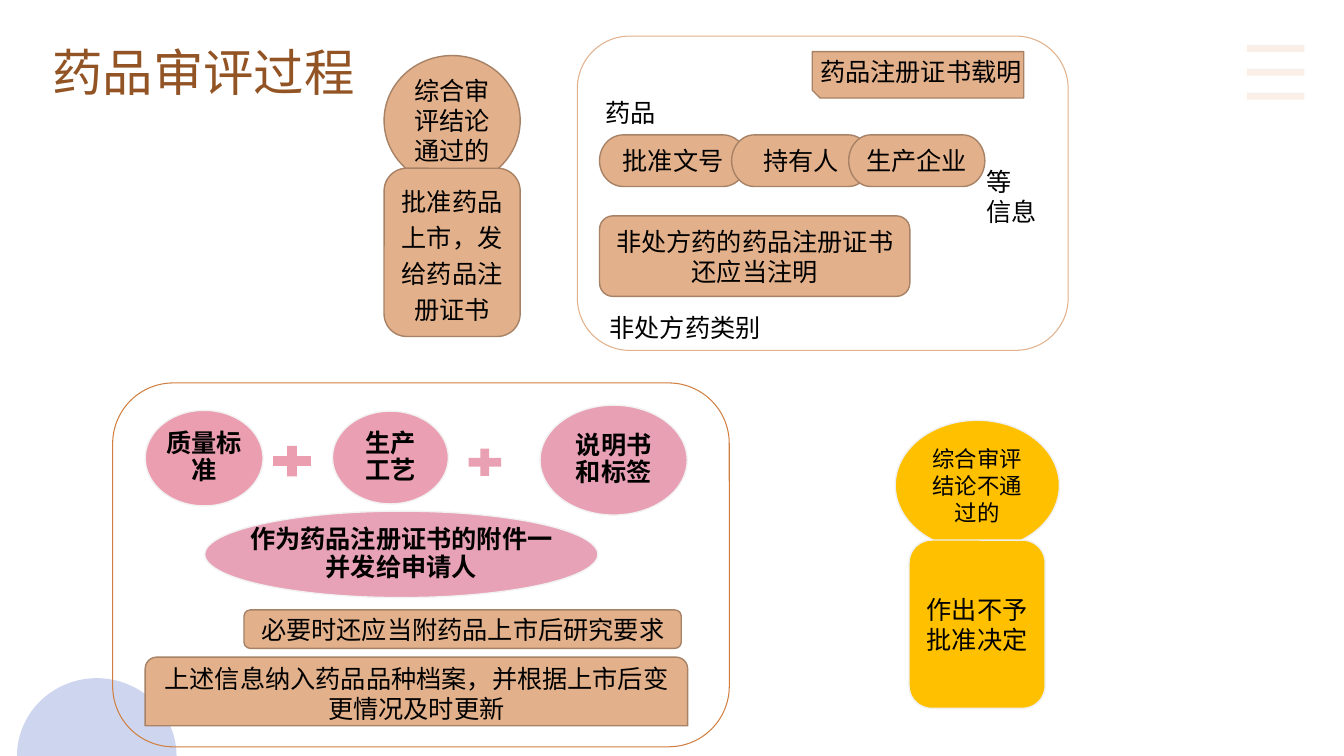
"""Builds the slide on the drug review process."""
from math import cos, pi, sin

from lxml.etree import SubElement
from pptx import Presentation
from pptx.dml.color import RGBColor
from pptx.enum.shapes import MSO_CONNECTOR, MSO_SHAPE
from pptx.enum.text import MSO_ANCHOR, PP_ALIGN
from pptx.oxml.ns import qn
from pptx.util import Cm, Pt

THEME = {
    "font": "Noto Sans CJK SC",
    "body": 18, "small": 16, "heading": 36,
    "ink": "000000", "title": "925424",
    "tan": "E2B08A", "tan_edge": "A78266", "rust": "D07F41",
    "gold": "FFC000", "gold_edge": "F0F0EF",
    "rose_edge": "F2F2F2", "periwinkle": "9FAEE0",
    "roses": ["EB9EAF", "EB9EAF", "EA9FB2", "E9A0B3", "E8A1B4", "E7A2B7"],
}

TITLE = ("药品审评过程", (1.07, 0.91, 23.88, 3.66))
MENU = {"left": 31.42, "right": 32.87, "top": 1.22, "gap": 0.6, "count": 3}
DOME = {"left": 0.43, "top": 17.09, "width": 4.02, "height": 1.96, "steps": 60}

ATTACHMENTS = [
    (["质量标", "准"], (3.66, 10.34, 2.97, 2.41)),
    (None, (6.71, 11.1, 1.3, 1.04)),
    (["生产", "工艺"], (8.38, 10.36, 2.92, 2.34)),
    (None, (11.66, 11.18, 1.12, 0.94)),
    (["说明书", "和标签"], (13.61, 10.21, 3.71, 2.77)),
    (["作为药品注册证书的附件一", "并发给申请人"], (5.16, 12.88, 9.91, 2.18)),
]

STEPS = [
    ("ROUNDED_RECTANGLE", "tan", (6.15, 15.37, 11.02, 0.97), ["必要时还应当附药品上市后研究要求"]),
    ("ROUND_2_SAME_RECTANGLE", "tan", (3.66, 16.56, 13.67, 1.73),
     ["上述信息纳入药品品种档案，并根据上市后变更情况及时更新"]),
    ("OVAL", "tan", (9.68, 1.4, 3.43, 3.28), ["综合审评结论通过的"]),
    ("ROUNDED_RECTANGLE", "tan", (9.68, 4.24, 3.43, 4.24), ["批准药品上市，发给药品注册证书"], "body", 1.2),
    ("OVAL", "gold", (22.56, 10.59, 4.14, 3.28), ["综合审评结论不通过的"], "small"),
    ("ROUNDED_RECTANGLE", "gold", (22.91, 13.61, 3.43, 4.24), ["作出不予批准决定"]),
    ("SNIP_1_RECTANGLE", "tan", (20.47, 1.3, 5.33, 1.17), []),
    ("FLOWCHART_TERMINATOR", "tan", (15.11, 3.4, 3.71, 1.3), ["批准文号"]),
    ("FLOWCHART_TERMINATOR", "tan", (18.44, 3.4, 3.51, 1.3), ["持有人"]),
    ("FLOWCHART_TERMINATOR", "tan", (21.39, 3.4, 3.43, 1.3), ["生产企业"]),
    ("ROUNDED_RECTANGLE", "tan", (15.11, 5.44, 7.82, 2.03), ["非处方药的药品注册证书", "还应当注明"]),
]

LABELS = [
    (["药品注册证书载明"], (20.42, 1.3, 5.94, 1.02)),
    (["药品"], (15.01, 2.34, 1.93, 1.02)),
    (["等", "信息"], (24.61, 4.06, 1.85, 1.8)),
    (["非处方药类别"], (15.11, 7.75, 5.44, 1.02)),
]

FRAMES = [("tan", (14.55, 0.91, 12.37, 7.92)), ("rust", (2.84, 9.65, 15.54, 9.17))]


def rgb(value):
    return RGBColor.from_string(value)


def place(box):
    return [Cm(length) for length in box]


def fade(holder, percent):
    color = next(holder.iter(qn("a:srgbClr")))
    SubElement(color, qn("a:alpha")).set("val", str(percent * 1000))


def add_run(paragraph, words, size="body", color="ink", bold=False):
    run = paragraph.add_run()
    run.text = words
    run.font.size = Pt(THEME[size])
    run.font.bold = bold
    run.font.color.rgb = rgb(THEME[color])
    run.font.name = THEME["font"]
    SubElement(run.font._element, qn("a:ea")).set("typeface", THEME["font"])


def write(frame, lines, size="body", color="ink", align=PP_ALIGN.LEFT, spacing=None):
    frame.word_wrap = True
    for index, words in enumerate(lines):
        paragraph = frame.add_paragraph() if index else frame.paragraphs[0]
        paragraph.alignment = align
        paragraph.line_spacing = spacing
        add_run(paragraph, words, size, color)


def paint(shape, fill=None, edge=None, weight=1):
    shape.shadow.inherit = False
    if fill:
        shape.fill.solid()
        shape.fill.fore_color.rgb = rgb(fill)
    else:
        shape.fill.background()
    if edge:
        shape.line.color.rgb = rgb(edge)
        shape.line.width = Pt(weight)
    else:
        shape.line.fill.background()


def add_menu(shapes):
    for index in range(MENU["count"]):
        y = Cm(MENU["top"] + index * MENU["gap"])
        bar = shapes.add_connector(MSO_CONNECTOR.STRAIGHT, Cm(MENU["left"]), y, Cm(MENU["right"]), y)
        bar.line.color.rgb = rgb(THEME["tan"])
        bar.line.width = Pt(5)
        fade(bar.line._ln, 20)
        SubElement(bar._element.spPr, qn("a:effectLst"))


def add_dome(shapes):
    radius = DOME["width"] / 2
    center, base = DOME["left"] + radius, DOME["top"] + DOME["height"]
    angles = [pi * step / DOME["steps"] for step in range(DOME["steps"] + 1)]
    rim = [(Cm(center + radius * cos(a)), Cm(base - DOME["height"] * sin(a))) for a in angles]
    builder = shapes.build_freeform(*rim[0])
    builder.add_line_segments(rim[1:], close=True)
    dome = builder.convert_to_shape()
    paint(dome, THEME["periwinkle"])
    fade(dome._element.spPr, 50)


def add_attachments(shapes):
    for (lines, box), rose in zip(ATTACHMENTS, THEME["roses"]):
        kind = MSO_SHAPE.OVAL if lines else MSO_SHAPE.MATH_PLUS
        part = shapes.add_shape(kind, *place(box))
        paint(part, rose, THEME["rose_edge"] if lines else None)
        if not lines:
            continue
        part.text_frame.word_wrap = False
        part.text_frame.vertical_anchor = MSO_ANCHOR.MIDDLE
        paragraph = part.text_frame.paragraphs[0]
        paragraph.alignment = PP_ALIGN.CENTER
        paragraph.line_spacing = 0.9
        for index, words in enumerate(lines):
            if index:
                paragraph.add_line_break()
            add_run(paragraph, words, bold=True)


def add_step(shapes, kind, tone, box, lines, size="body", spacing=None):
    step = shapes.add_shape(MSO_SHAPE[kind], *place(box))
    paint(step, THEME[tone], THEME[tone + "_edge"])
    step.rotation = 180 if kind == "SNIP_1_RECTANGLE" else 0
    step.text_frame.vertical_anchor = MSO_ANCHOR.MIDDLE
    write(step.text_frame, lines, size, align=PP_ALIGN.CENTER, spacing=spacing)


def main():
    deck = Presentation()
    deck.slide_width, deck.slide_height = Cm(33.87), Cm(19.05)
    shapes = deck.slides.add_slide(deck.slide_layouts[6]).shapes
    add_menu(shapes)
    add_dome(shapes)
    add_attachments(shapes)
    for step in STEPS:
        add_step(shapes, *step)
    for lines, box in LABELS:
        write(shapes.add_textbox(*place(box)).text_frame, lines)
    for tone, box in FRAMES:
        paint(shapes.add_shape(MSO_SHAPE.ROUNDED_RECTANGLE, *place(box)), edge=THEME[tone], weight=0.75)
    heading, box = TITLE
    write(shapes.add_textbox(*place(box)).text_frame, [heading], "heading", "title")
    deck.save("out.pptx")


if __name__ == "__main__":
    main()
